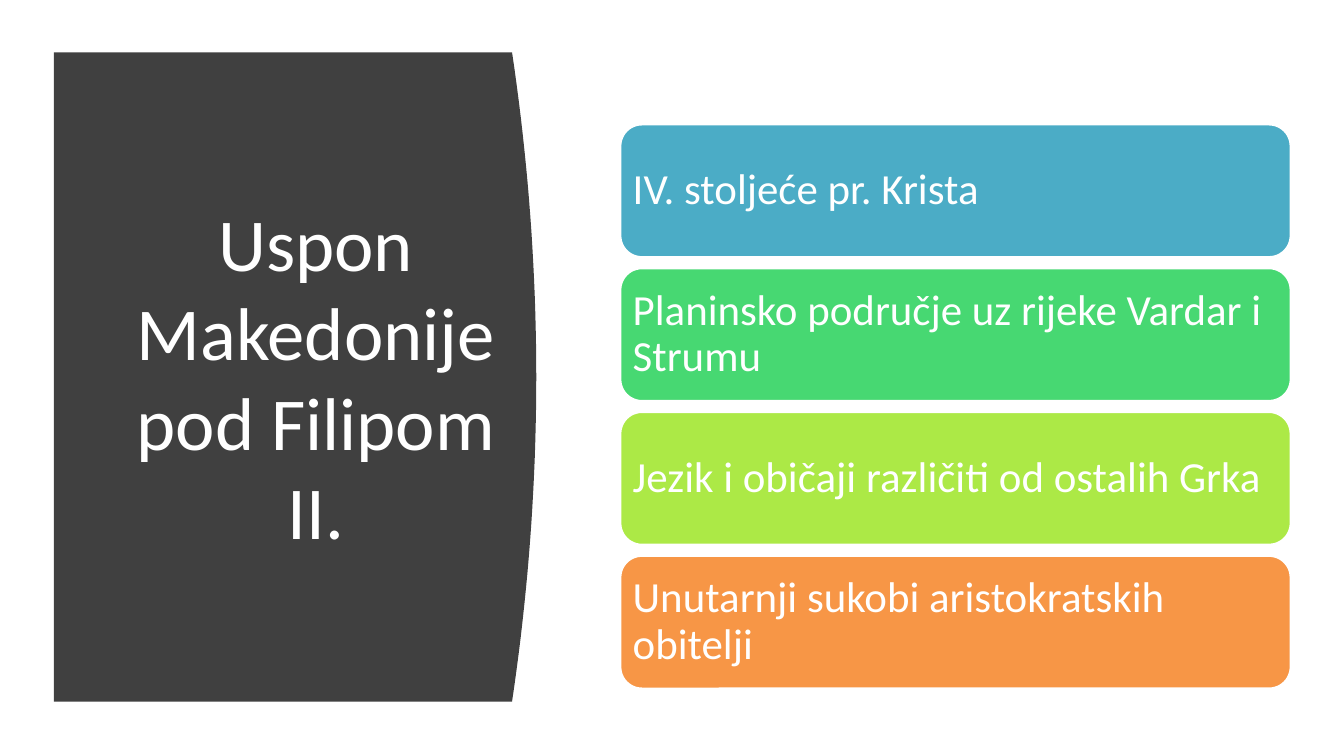
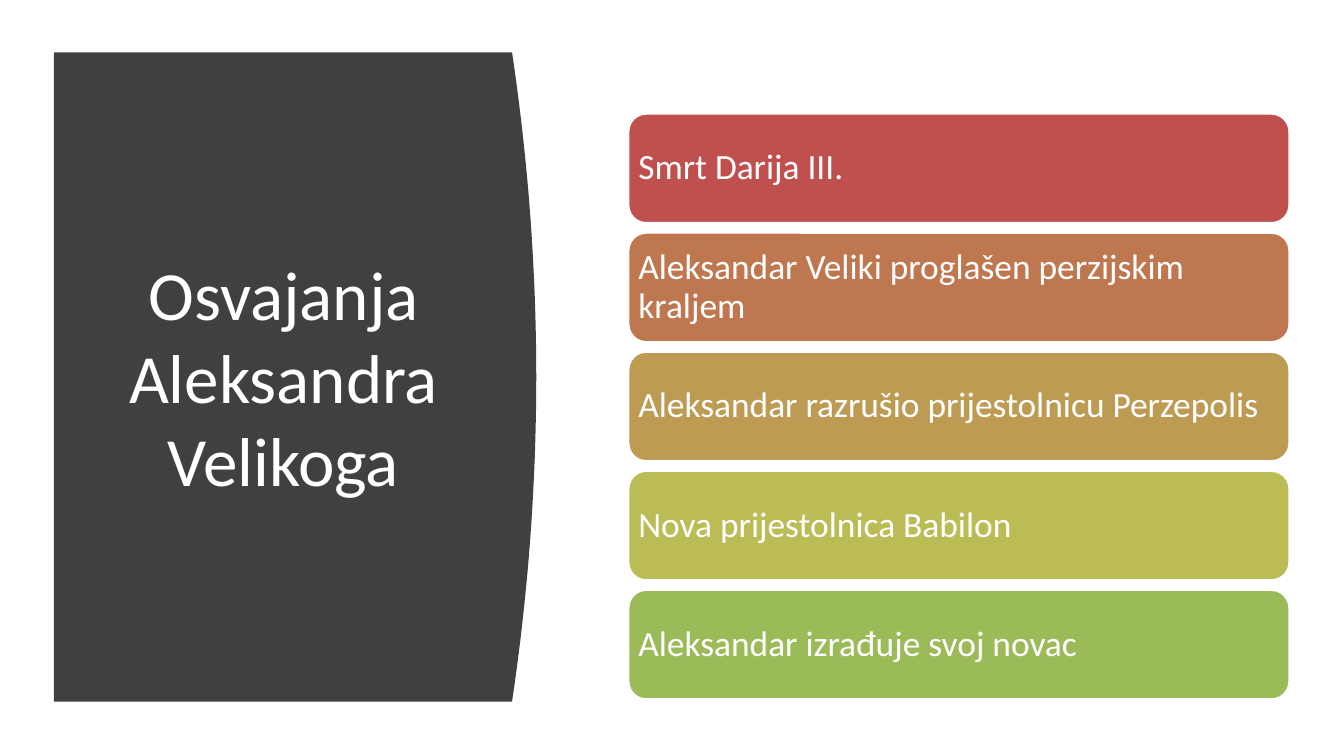
from pptx import Presentation
from pptx.dml.color import RGBColor
from pptx.enum.shapes import MSO_SHAPE as Shape
from pptx.enum.text import MSO_ANCHOR as Anchor, MSO_AUTO_SIZE as AutoSize, PP_ALIGN as Align
from pptx.util import Inches, Pt

COLORS = {
    "white": "FFFFFF", "panel": "404040",
    "blue": "4BACC6", "green": "47D872", "lime": "ACE946", "orange": "F79646",
    "red": "C0504D", "copper": "BF7750", "ochre": "BD9B53", "olive": "BCBC56", "leaf": "9BBB59",
}
FONT = "Calibri"
SLIDE_WIDTH = 10
SLIDE_HEIGHT = SLIDE_WIDTH * 9 / 16
PANEL_BOX = (0.4, 0.39, 3.59, 4.83)
BULGE = 0.18
CURVE_STEPS = 40

SLIDES = [
    {
        "title": "Uspon Makedonije pod Filipom II.",
        "title_box": (0.71, 0.83, 3.28, 3.93), "title_size": 40,
        "cards_box": (4.61, 0.92, 5, 4.21), "gap": 0.07, "inset": 0.05, "card_size": 23,
        "cards": [
            ("IV. stoljeće pr. Krista", "blue"),
            ("Planinsko područje uz rijeke Vardar i Strumu", "green"),
            ("Jezik i običaji različiti od ostalih Grka", "lime"),
            ("Unutarnji sukobi aristokratskih obitelji", "orange"),
        ],
    },
    {
        "title": "Osvajanja Aleksandra Velikoga",
        "title_box": (0.71, 0.83, 2.8, 3.93), "title_size": 37,
        "cards_box": (4.67, 0.84, 4.93, 4.37), "gap": 0.06, "inset": 0.04, "card_size": 19,
        "cards": [
            ("Smrt Darija III.", "red"),
            ("Aleksandar Veliki proglašen perzijskim kraljem", "copper"),
            ("Aleksandar razrušio prijestolnicu Perzepolis", "ochre"),
            ("Nova prijestolnica Babilon", "olive"),
            ("Aleksandar izrađuje svoj novac", "leaf"),
        ],
    },
]


def rgb(name):
    return RGBColor.from_string(COLORS[name])


def set_all(target, values):
    for name, value in values.items():
        setattr(target, name, value)


def paint(shape, fill):
    shape.shadow.inherit = False
    shape.fill.solid()
    shape.fill.fore_color.rgb = rgb(fill)


def write(shape, text, size, paragraph_format, frame_format):
    frame = shape.text_frame
    frame.text = text
    set_all(frame, {"word_wrap": True, "auto_size": AutoSize.NONE,
                    "vertical_anchor": Anchor.MIDDLE, **frame_format})
    paragraph = frame.paragraphs[0]
    set_all(paragraph, paragraph_format)
    font = paragraph.runs[0].font
    set_all(font, {"name": FONT, "size": Pt(size)})
    font.color.rgb = rgb("white")


def add_panel(slide, box):
    """Dark panel whose right edge bulges as a parabola."""
    left, top, width, height = box
    edge = left + width - BULGE
    builder = slide.shapes.build_freeform(Inches(left), Inches(top))
    curve = []
    for step in range(CURVE_STEPS + 1):
        t = 2 * step / CURVE_STEPS - 1
        curve.append((Inches(edge + BULGE * (1 - t * t)),
                      Inches(top + height * step / CURVE_STEPS)))
    builder.add_line_segments(curve + [(Inches(left), Inches(top + height))], close=True)
    panel = builder.convert_to_shape()
    paint(panel, "panel")
    panel.line.fill.background()


def place_title(slide, text, box, size):
    title = slide.shapes.title
    # Bring the title in front of the panel
    slide.shapes._spTree.append(title._element)
    set_all(title, dict(zip(("left", "top", "width", "height"), map(Inches, box))))
    write(title, text, size, {"alignment": Align.CENTER}, {})


def add_cards(slide, box, cards, gap, inset, size):
    """Column of equal rounded cards filling the box."""
    left, top, width, height = box
    card_height = (height - gap * (len(cards) - 1)) / len(cards)
    margins = {f"margin_{side}": Inches(inset) for side in ("left", "top", "right", "bottom")}
    for row, (text, fill) in enumerate(cards):
        card = slide.shapes.add_shape(
            Shape.ROUNDED_RECTANGLE, Inches(left), Inches(top + row * (card_height + gap)),
            Inches(width), Inches(card_height))
        paint(card, fill)
        card.line.color.rgb = rgb("white")
        card.line.width = Pt(2)
        write(card, text, size, {"alignment": Align.LEFT, "line_spacing": 0.9}, margins)


def add_topic_slide(deck, topic):
    slide = deck.slides.add_slide(deck.slide_layouts.get_by_name("Title Only"))
    add_panel(slide, PANEL_BOX)
    place_title(slide, topic["title"], topic["title_box"], topic["title_size"])
    add_cards(slide, topic["cards_box"], topic["cards"],
              topic["gap"], topic["inset"], topic["card_size"])


def main():
    deck = Presentation()
    set_all(deck, {"slide_width": Inches(SLIDE_WIDTH), "slide_height": Inches(SLIDE_HEIGHT)})
    for topic in SLIDES:
        add_topic_slide(deck, topic)
    deck.save("out.pptx")


if __name__ == "__main__":
    main()
